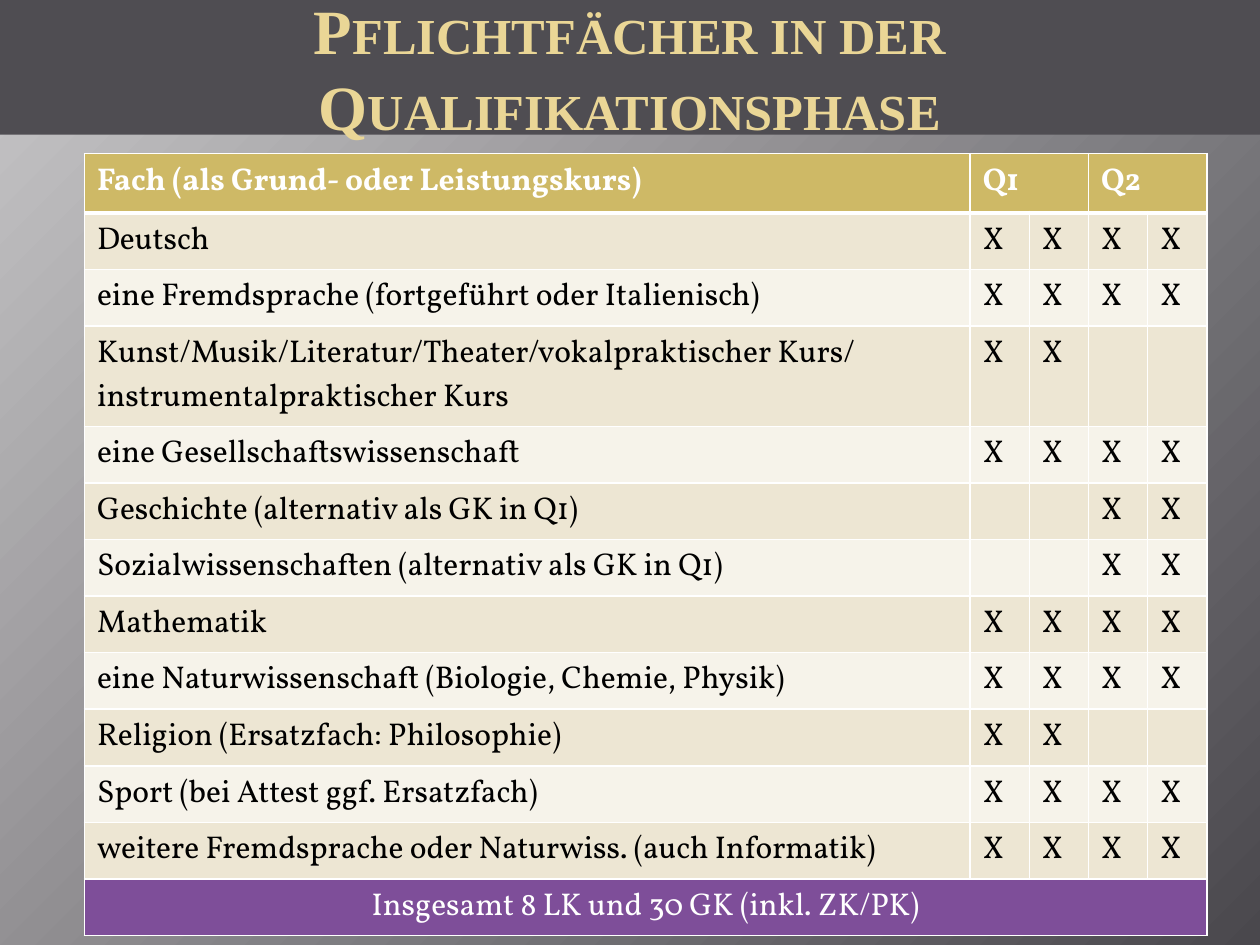
from lxml import etree
from pptx import Presentation
from pptx import util as u
from pptx.dml import color
from pptx.enum import shapes, text
from pptx.oxml import ns

PX = u.Inches(1) // 100  # 100 px to the inch
COLORS = {
    "bg_light": "C7C6C8", "bg_dark": "4A484D", "banner": "4F4D52",
    "title": "EAD696", "header": "CEB966", "odd": "EDE6D3", "even": "F6F3EA",
    "total": "7E4E99", "white": "FFFFFF", "black": "000000",
}
COLUMNS = [703, 47, 47, 47, 47]
ROWS = [47, 39, 39, 58, 39, 38, 38, 37, 36, 36, 44, 39, 39]
SUBJECTS = [
    ("Deutsch", "XXXX"),
    ("eine Fremdsprache (fortgeführt oder Italienisch)", "XXXX"),
    ("Kunst/Musik/Literatur/Theater/vokalpraktischer Kurs/ "
     "instrumentalpraktischer Kurs", "XX--"),
    ("eine Gesellschaftswissenschaft", "XXXX"),
    ("Geschichte (alternativ als GK in Q1)", "--XX"),
    ("Sozialwissenschaften (alternativ als GK in Q1)", "--XX"),
    ("Mathematik", "XXXX"),
    ("eine Naturwissenschaft (Biologie, Chemie, Physik)", "XXXX"),
    ("Religion (Ersatzfach: Philosophie)", "XX--"),
    ("Sport (bei Attest ggf. Ersatzfach)", "XXXX"),
    ("weitere Fremdsprache oder Naturwiss. (auch Informatik)", "XXXX"),
]


def rgb(name):
    return color.RGBColor.from_string(COLORS[name])


class Deck:
    def __init__(self, width, height):
        self.prs = Presentation()
        self.prs.slide_width, self.prs.slide_height = width * PX, height * PX
        self.s = self.prs.slides.add_slide(self.prs.slide_layouts[6])

    def background(self, inner, outer):
        """Radial gradient that starts in the top left corner."""
        fill = self.s.background.fill
        fill.gradient()
        for stop, name, position in zip(fill.gradient_stops, (inner, outer), (0, 1)):
            stop.color.rgb = rgb(name)
            stop.position = position
        lin = self.s.element.find(".//" + ns.qn("a:lin"))
        radial = etree.Element(ns.qn("a:path"), path="circle")
        etree.SubElement(radial, ns.qn("a:fillToRect"), r="100000", b="100000")
        lin.getparent().replace(lin, radial)

    def style(self, p, font, size, name, bold=False):
        for r in p.runs:
            r.font.name, r.font.size, r.font.bold = font, u.Pt(size), bold
            r.font.color.rgb = rgb(name)

    def banner(self, title, x, y, w, h):
        sp = self.s.shapes.add_shape(shapes.MSO_SHAPE.RECTANGLE,
                                     x * PX, y * PX, w * PX, h * PX)
        sp.shadow.inherit = False
        sp.fill.solid()
        sp.fill.fore_color.rgb = rgb("banner")
        sp.line.fill.background()
        tf = sp.text_frame
        tf.word_wrap = True
        tf.vertical_anchor = text.MSO_ANCHOR.MIDDLE
        tf.margin_left = tf.margin_right = 5 * PX
        tf.margin_top = tf.margin_bottom = 0
        tf.text = title
        p = tf.paragraphs[0]
        p.alignment = text.PP_ALIGN.CENTER
        self.style(p, "Times New Roman", 36, "title", True)
        p.runs[0].font._element.set("cap", "small")

    def table(self, x, y, columns, rows):
        frame = self.s.shapes.add_table(len(rows), len(columns), x * PX, y * PX,
                                        sum(columns) * PX, sum(rows) * PX)
        for column, width in zip(frame.table.columns, columns):
            column.width = width * PX
        for row, height in zip(frame.table.rows, rows):
            row.height = height * PX
        return frame.table

    def cell(self, cell, words, fill, ink="black", bold=False, top=1, bottom=1):
        tcPr = cell._tc.get_or_add_tcPr()
        for side, width in zip("LRTB", (1, 1, top, bottom)):
            ln = etree.SubElement(tcPr, ns.qn(f"a:ln{side}"), w=str(u.Pt(width)))
            solid = etree.SubElement(ln, ns.qn("a:solidFill"))
            etree.SubElement(solid, ns.qn("a:srgbClr"), val=COLORS["white"])
        cell.fill.solid()
        cell.fill.fore_color.rgb = rgb(fill)
        cell.text_frame.text = words
        self.style(cell.text_frame.paragraphs[0], "Vollkorn", 18, ink, bold)


def main():
    deck = Deck(1000, 750)
    deck.background("bg_light", "bg_dark")
    deck.banner("Pflichtfächer in der Qualifikationsphase", 0, 0, 1000, 107)

    table = deck.table(67, 122, COLUMNS, ROWS)
    last = len(ROWS) - 1
    headings = ["Fach (als Grund- oder Leistungskurs)", "Q1", "", "Q2", ""]
    for c, heading in enumerate(headings):
        deck.cell(table.cell(0, c), heading, "header", "white", True, bottom=3)
    for i, (subject, marks) in enumerate(SUBJECTS, 1):
        for c, words in enumerate([subject, *marks.replace("-", " ")]):
            deck.cell(table.cell(i, c), words.strip(), "odd" if i % 2 else "even",
                      top=3 if i == 1 else 1)
    for c in range(len(COLUMNS)):
        words = "" if c else "Insgesamt 8 LK und 30 GK (inkl. ZK/PK)"
        deck.cell(table.cell(last, c), words, "total", "white")
    table.cell(last, 0).text_frame.paragraphs[0].alignment = text.PP_ALIGN.CENTER

    for row, first, end in ((0, 1, 2), (0, 3, 4), (last, 0, 4)):
        table.cell(row, first).merge(table.cell(row, end))
    deck.prs.save("out.pptx")


if __name__ == "__main__":
    main()
